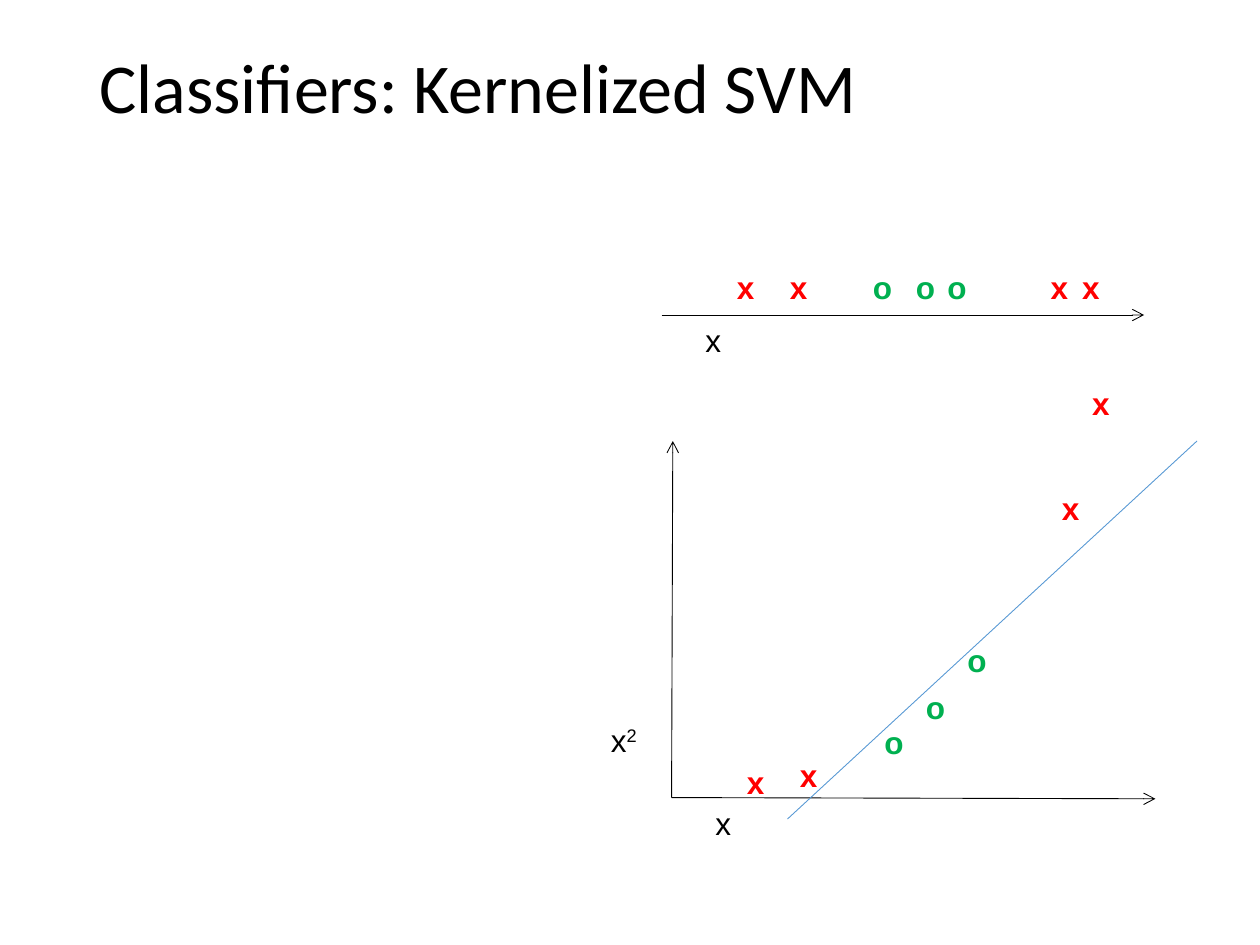
from lxml import etree
from pptx import Presentation
from pptx.dml.color import RGBColor
from pptx.enum.shapes import MSO_CONNECTOR
from pptx.enum.text import MSO_ANCHOR, MSO_AUTO_SIZE, PP_ALIGN
from pptx.oxml.ns import qn
from pptx.util import Inches, Pt

BLACK = RGBColor(0, 0, 0)
RED = RGBColor(0xFF, 0, 0)
GREEN = RGBColor(0, 0xB0, 0x50)
BLUE = RGBColor(0x5B, 0x9B, 0xD5)
STRAIGHT = MSO_CONNECTOR.STRAIGHT

TITLE = "Classifiers: Kernelized SVM"
MARKS = {"x": (RED, 0.34), "o": (GREEN, 0.36)}
ROW = 2.08
PLOTS = [
    {
        "lines": [((5.25, 2.5), (9.08, 2.5), BLACK, True)],
        "marks": {
            "x": [(left, ROW) for left in (5.75, 6.17, 8.24, 8.49)],
            "o": [(left, ROW) for left in (6.83, 7.17, 7.42)],
        },
        "labels": [("x", "", 5.5, 2.5, 0.33)],
    },
    {
        "lines": [
            ((5.33, 6.33), (9.17, 6.34), BLACK, True),
            ((5.33, 6.33), (5.34, 3.5), BLACK, True),
            ((9.5, 3.5), (6.25, 6.5), BLUE, False),
        ],
        "marks": {
            "x": [(5.83, 6.01), (6.25, 5.95), (8.33, 3.83), (8.57, 3)],
            "o": [(6.92, 5.69), (7.25, 5.41), (7.58, 5.04)],
        },
        "labels": [("x", "", 5.58, 6.33, 0.33), ("x", "2", 4.75, 5.67, 0.42)],
    },
]


def style(run, font, size, color, bold=False):
    run.font.name = font
    run.font.size = Pt(size)
    run.font.color.rgb = color
    run.font.bold = bold


def add_line(group, start, end, color, arrow):
    ends = [Inches(v) for v in start + end]
    line = group.shapes.add_connector(STRAIGHT, *ends)
    line.line.color.rgb = color
    line.line.width = Pt(0.5)
    if arrow:
        outline = line.line._get_or_add_ln()
        etree.SubElement(outline, qn("a:tailEnd"), type="arrow")
    etree.SubElement(line._element.spPr, qn("a:effectLst"))


def add_text(group, text, power, left, top, width, color, bold):
    area = [Inches(v) for v in (left, top, width, 0.4)]
    frame = group.shapes.add_textbox(*area).text_frame
    frame.word_wrap = False
    frame.auto_size = MSO_AUTO_SIZE.SHAPE_TO_FIT_TEXT
    para = frame.paragraphs[0]
    para.text = text
    if power:
        run = para.add_run()
        run.text = power
        run.font._element.set("baseline", "30000")
    for run in para.runs:
        style(run, "Arial", 18, color, bold)


def add_plot(slide, plot):
    group = slide.shapes.add_group_shape()
    for line in plot["lines"]:
        add_line(group, *line)
    for mark, spots in plot["marks"].items():
        color, width = MARKS[mark]
        for left, top in spots:
            add_text(group, mark, "", left, top, width, color, True)
    for label in plot["labels"]:
        add_text(group, *label, BLACK, False)


def main():
    deck = Presentation()
    deck.slide_width, deck.slide_height = Inches(10), Inches(7.5)
    slide = deck.slides.add_slide(deck.slide_layouts[5])
    title = slide.shapes.title
    title.left, title.top = Inches(0.69), Inches(0)
    title.width, title.height = Inches(8.62), Inches(1.45)
    frame = title.text_frame
    frame.text = TITLE
    frame.vertical_anchor = MSO_ANCHOR.MIDDLE
    para = frame.paragraphs[0]
    para.alignment = PP_ALIGN.LEFT
    para.line_spacing = 0.9
    style(para.runs[0], "Calibri", 40, BLACK)
    for plot in PLOTS:
        add_plot(slide, plot)
    deck.save("out.pptx")


if __name__ == "__main__":
    main()
